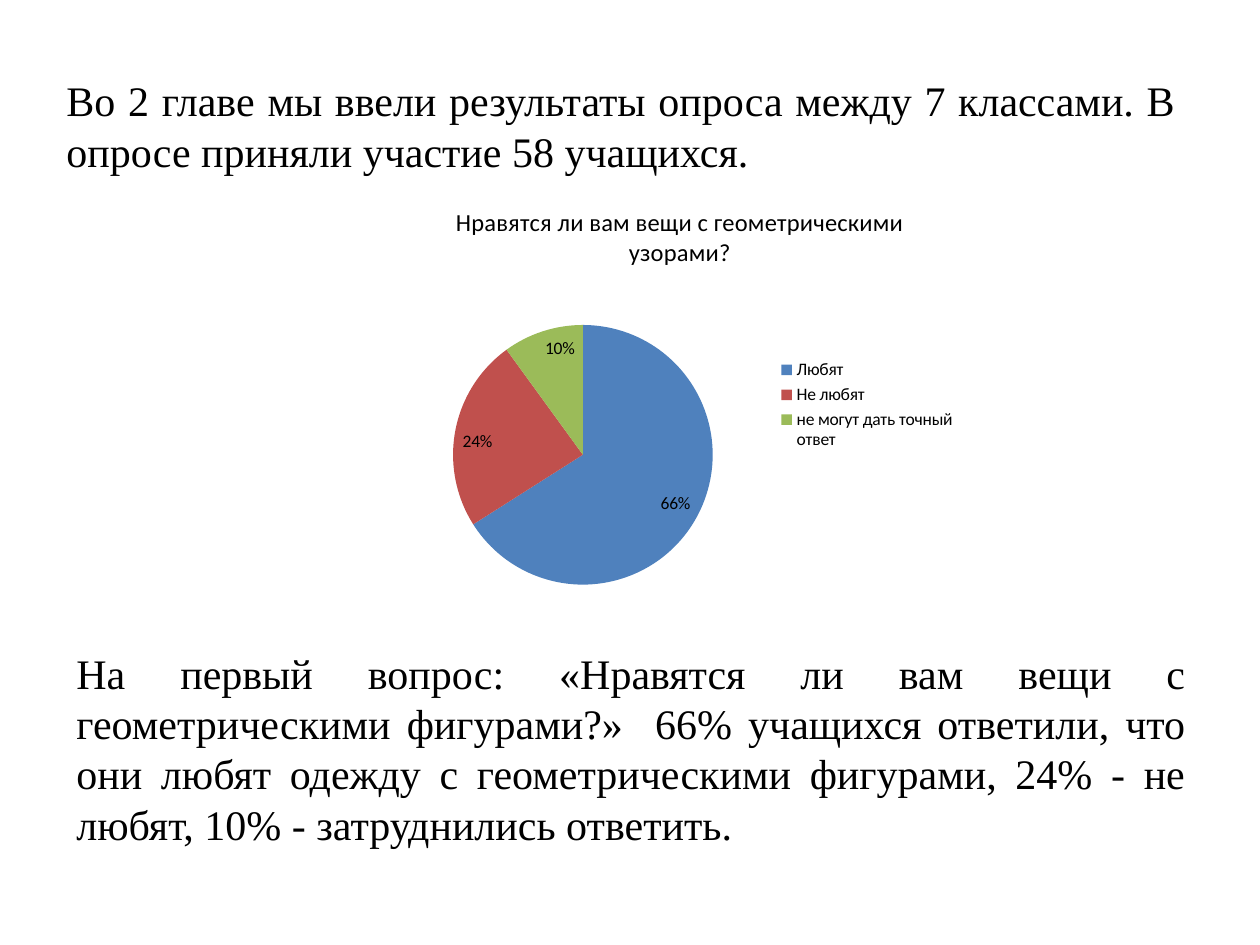
from lxml.etree import SubElement
from pptx import Presentation
from pptx.chart.data import CategoryChartData
from pptx.dml.color import RGBColor
from pptx.enum.chart import XL_CHART_TYPE, XL_LABEL_POSITION, XL_LEGEND_POSITION
from pptx.enum.text import MSO_ANCHOR, PP_ALIGN
from pptx.oxml.ns import qn
from pptx.util import Emu, Pt

PX = 914400 / 126
COLORS = {
    "text": "000000",
    "like": "4F81BD",
    "dislike": "C0504D",
    "unsure": "9BBB59",
}
ANSWERS = [
    ("Любят", 66, "like"),
    ("Не любят", 24, "dislike"),
    ("не могут дать точный ответ", 10, "unsure"),
]


def px(length):
    return Emu(round(length * PX))


def color(name):
    return RGBColor.from_string(COLORS[name])


class SurveySlide:
    body_font = "Times New Roman"
    chart_font = "Calibri"

    def __init__(self, deck):
        self.slide = deck.slides.add_slide(deck.slide_layouts[6])

    def style(self, font, name, size):
        font.name, font.size, font.bold = name, Pt(size), False
        font.color.rgb = color("text")

    def text(self, box, wording, anchor=MSO_ANCHOR.TOP):
        frame = self.slide.shapes.add_textbox(*map(px, box)).text_frame
        frame.word_wrap = True
        frame.vertical_anchor = anchor
        paragraph = frame.paragraphs[0]
        paragraph.text = wording
        paragraph.alignment = PP_ALIGN.JUSTIFY
        self.style(paragraph.font, self.body_font, 24)

    def place(self, parent, box, extent, inner=False):
        """Fix a chart part at box, in px from the chart's corner."""
        layout = parent.get_or_add_layout() if hasattr(parent, "get_or_add_layout") else parent.find(qn("c:layout"))
        if layout is None:
            layout = parent.makeelement(qn("c:layout"), {})
            parent.insert(1 if parent.find(qn("c:legendPos")) is not None else 0, layout)
        for child in list(layout):
            layout.remove(child)
        manual = SubElement(layout, qn("c:manualLayout"))
        if inner:
            SubElement(manual, qn("c:layoutTarget"), val="inner")
        for tag in ("xMode", "yMode"):
            SubElement(manual, qn(f"c:{tag}"), val="edge")
        for tag, length, whole in zip("xywh", box, extent * 2):
            SubElement(manual, qn(f"c:{tag}"), val=f"{length / whole:.3f}")

    def pie(self, box, title, answers, plot_box, legend_box):
        data = CategoryChartData()
        data.categories = [label for label, _, _ in answers]
        data.add_series("Series 1", [share for _, share, _ in answers])
        chart = self.slide.shapes.add_chart(
            XL_CHART_TYPE.PIE, *map(px, box), data).chart
        self.style(chart.font, self.chart_font, 10)

        # Title
        chart.has_title = True
        heading = chart.chart_title.text_frame.paragraphs[0]
        heading.text = title
        self.style(heading.font, self.chart_font, 14)
        chart.chart_title.include_in_layout = False

        # Slices and percentages
        plot = chart.plots[0]
        plot.vary_by_categories = True
        for index, (_, _, name) in enumerate(answers):
            fill = plot.series[0].points[index].format.fill
            fill.solid()
            fill.fore_color.rgb = color(name)
        plot.has_data_labels = True
        labels = plot.data_labels
        labels.show_percentage, labels.show_value = True, False
        labels.number_format, labels.number_format_is_linked = "0%", False
        labels.position = XL_LABEL_POSITION.INSIDE_END
        self.style(labels.font, self.chart_font, 10)

        # Legend
        chart.has_legend = True
        legend = chart.legend
        legend.position = XL_LEGEND_POSITION.RIGHT
        legend.include_in_layout = False
        self.style(legend.font, self.chart_font, 10)

        extent = box[2:]
        plot_area = chart.element.find(".//" + qn("c:plotArea"))
        self.place(plot_area, plot_box, extent, inner=True)
        self.place(chart.element.find(".//" + qn("c:legend")), legend_box, extent)


def main():
    deck = Presentation()
    deck.slide_width, deck.slide_height = px(1260), px(945)
    survey = SurveySlide(deck)

    # Introduction
    survey.text(
        (54, 66, 1134, 118),
        "Во 2 главе мы ввели результаты опроса между 7 классами. "
        "В опросе приняли участие 58 учащихся.",
        MSO_ANCHOR.MIDDLE)

    # Survey result
    survey.pie(
        (392, 185, 576, 440),
        "Нравятся ли вам вещи с геометрическими узорами?",
        ANSWERS, plot_box=(61, 140, 260, 260), legend_box=(382, 170, 186, 100))

    # Conclusion
    survey.text(
        (64, 641, 1134, 227),
        "На первый вопрос: «Нравятся ли вам вещи с геометрическими "
        "фигурами?»  66% учащихся ответили, что они любят одежду с "
        "геометрическими фигурами, 24% - не любят, 10% - затруднились "
        "ответить.")

    deck.save("out.pptx")


if __name__ == "__main__":
    main()
